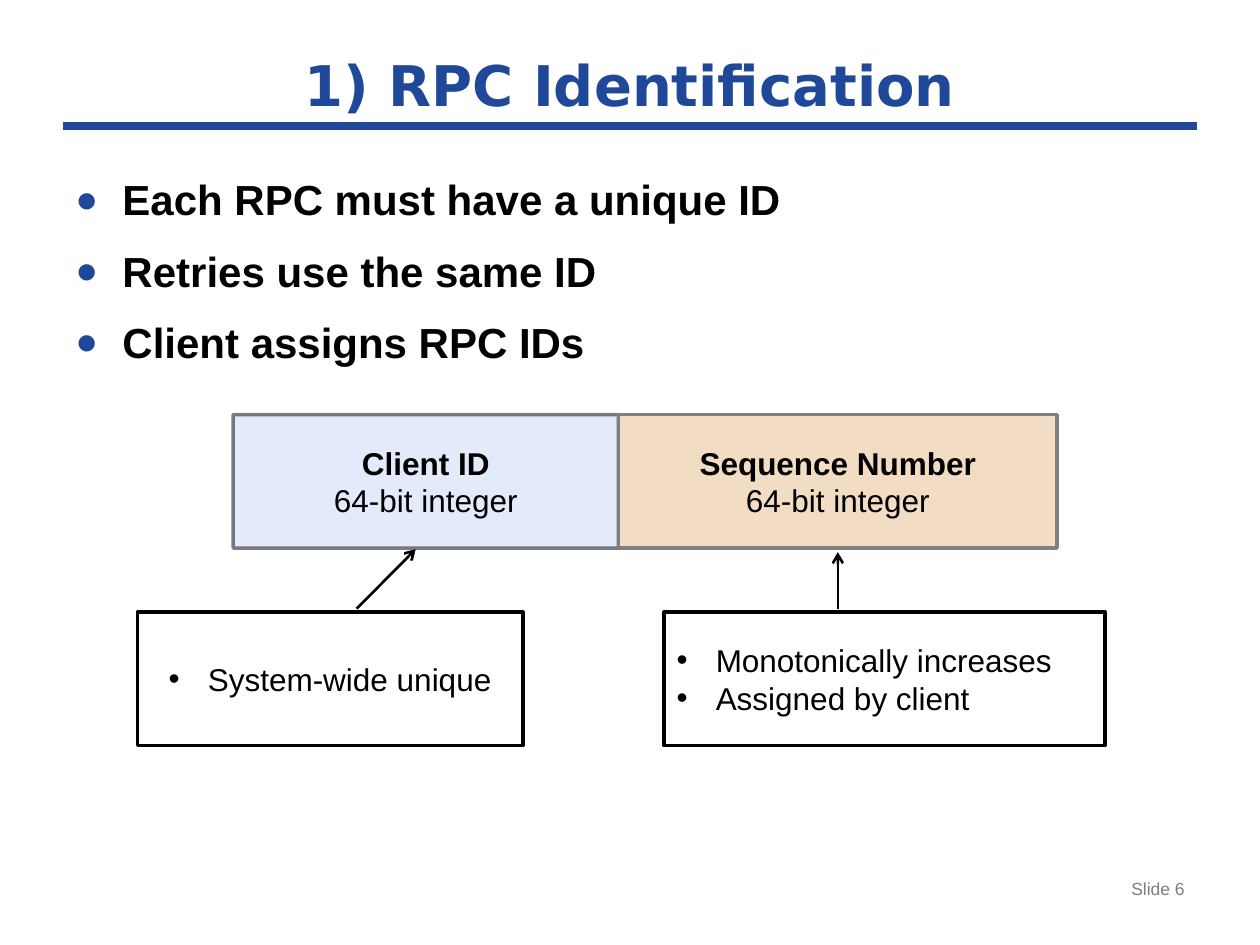
import pptx
import pptx.dml.color
import pptx.enum.shapes
import pptx.enum.text
import pptx.oxml.ns
import pptx.util
import lxml.etree

Cm = pptx.util.Cm
Pt = pptx.util.Pt
Color = pptx.dml.color.RGBColor
Align = pptx.enum.text.PP_ALIGN
Anchor = pptx.enum.text.MSO_ANCHOR
qn = pptx.oxml.ns.qn

NAVY = Color(0x1F, 0x48, 0x99)
BLACK = Color(0x00, 0x00, 0x00)
WHITE = Color(0xFF, 0xFF, 0xFF)
GREY = Color(0x80, 0x80, 0x80)
DIM = Color(0x7F, 0x7F, 0x7F)
BLUE = Color(0xC9, 0xD7, 0xF4)
SAND = Color(0xF3, 0xDC, 0xC4)


def child(node, tag, **attrs):
    return lxml.etree.SubElement(node, qn(tag), attrs)


def bullet(para, mark, indent, color, size):
    props = para._p.get_or_add_pPr()
    props.set("marL", str(Cm(indent)))
    props.set("indent", str(-Cm(indent)))
    child(child(props, "a:buClr"), "a:srgbClr", val=str(color))
    child(props, "a:buSzPct", val=str(size * 1000))
    child(props, "a:buFont", typeface="Arial")
    child(props, "a:buChar", char=mark)


def write(frame, lines, size=18, font="Arial", color=BLACK, bold=(), align=Align.LEFT,
          anchor=Anchor.TOP, before=0, mark=None, indent=0.79, tint=BLACK, scale=100):
    frame.word_wrap = True
    frame.vertical_anchor = anchor
    for row, line in enumerate(lines):
        para = frame.paragraphs[0] if row == 0 else frame.add_paragraph()
        para.alignment = align
        para.space_before = Pt(before)
        if mark:
            bullet(para, mark, indent, tint, scale)
        run = para.add_run()
        run.text = line
        run.font.name = font
        run.font.size = Pt(size)
        run.font.bold = row in bold
        run.font.color.rgb = color


class Deck:
    font = "Arial"
    ink = BLACK
    edge = 2
    high = 2.69

    def __init__(self):
        self.show = pptx.Presentation()
        self.show.slide_width = Cm(25.4)
        self.show.slide_height = Cm(19.05)
        self.slide = self.show.slides.add_slide(self.show.slide_layouts[6])

    def text(self, left, top, width, height, lines, **style):
        box = self.slide.shapes.add_textbox(Cm(left), Cm(top), Cm(width), Cm(height))
        write(box.text_frame, lines, **{"font": self.font, **style})

    def box(self, left, top, width, lines, fill=WHITE, edge=BLACK, alpha=100, **style):
        kind = pptx.enum.shapes.MSO_SHAPE.RECTANGLE
        shape = self.slide.shapes.add_shape(kind, Cm(left), Cm(top), Cm(width), Cm(self.high))
        shape.shadow.inherit = False
        shape.fill.solid()
        shape.fill.fore_color.rgb = fill
        shape.line.color.rgb = edge
        shape.line.width = Pt(self.edge)
        if alpha < 100:
            for paint in shape.element.spPr.iter(qn("a:srgbClr")):
                child(paint, "a:alpha", val=str(alpha * 1000))
        write(shape.text_frame, lines, anchor=Anchor.MIDDLE, **{"font": self.font, **style})

    def line(self, start, end, color=None, width=1.5, arrow=False):
        kind = pptx.enum.shapes.MSO_CONNECTOR.STRAIGHT
        points = [Cm(value) for value in (*start, *end)]
        rule = self.slide.shapes.add_connector(kind, *points)
        rule.line.color.rgb = color or self.ink
        rule.line.width = Pt(width)
        if arrow:
            child(rule.line._get_or_add_ln(), "a:tailEnd", type="arrow")
        child(rule._element.spPr, "a:effectLst")

    def save(self):
        self.show.save("out.pptx")


def main():
    deck = Deck()
    deck.line((1.27, 2.54), (24.13, 2.54), color=NAVY, width=4.5)
    deck.text(1.27, 3.38, 22.86, 13.64,
              ["Each RPC must have a unique ID", "Retries use the same ID", "Client assigns RPC IDs"],
              size=24, bold=(0, 1, 2), before=12, mark="●", indent=0.95, tint=NAVY, scale=90)
    deck.text(18.21, 17.58, 5.92, 1.09, ["Slide 6"], size=10, color=DIM, align=Align.RIGHT)
    deck.text(1.27, 0.84, 22.86, 1.7, ["1) RPC Identification"], size=32, font="DejaVu Sans",
              color=NAVY, bold=(0,), align=Align.CENTER, anchor=Anchor.MIDDLE)

    top, low = 8.36, 12.34
    head = {"bold": (0,), "align": Align.CENTER}
    deck.box(4.7, top, 7.77, ["Client ID", "64-bit integer"], fill=BLUE, alpha=50, **head)
    deck.box(12.47, top, 8.84, ["Sequence Number", "64-bit integer"], fill=SAND, edge=GREY, **head)

    deck.line((7.19, 12.27), (8.38, 11.07), arrow=True)
    deck.box(2.77, low, 7.77, ["System-wide unique"], mark="•", align=Align.CENTER)
    deck.line((16.89, 12.27), (16.89, 11.13), arrow=True)
    deck.box(13.39, low, 8.89, ["Monotonically increases", "Assigned by client"], mark="•")
    deck.save()


if __name__ == "__main__":
    main()
